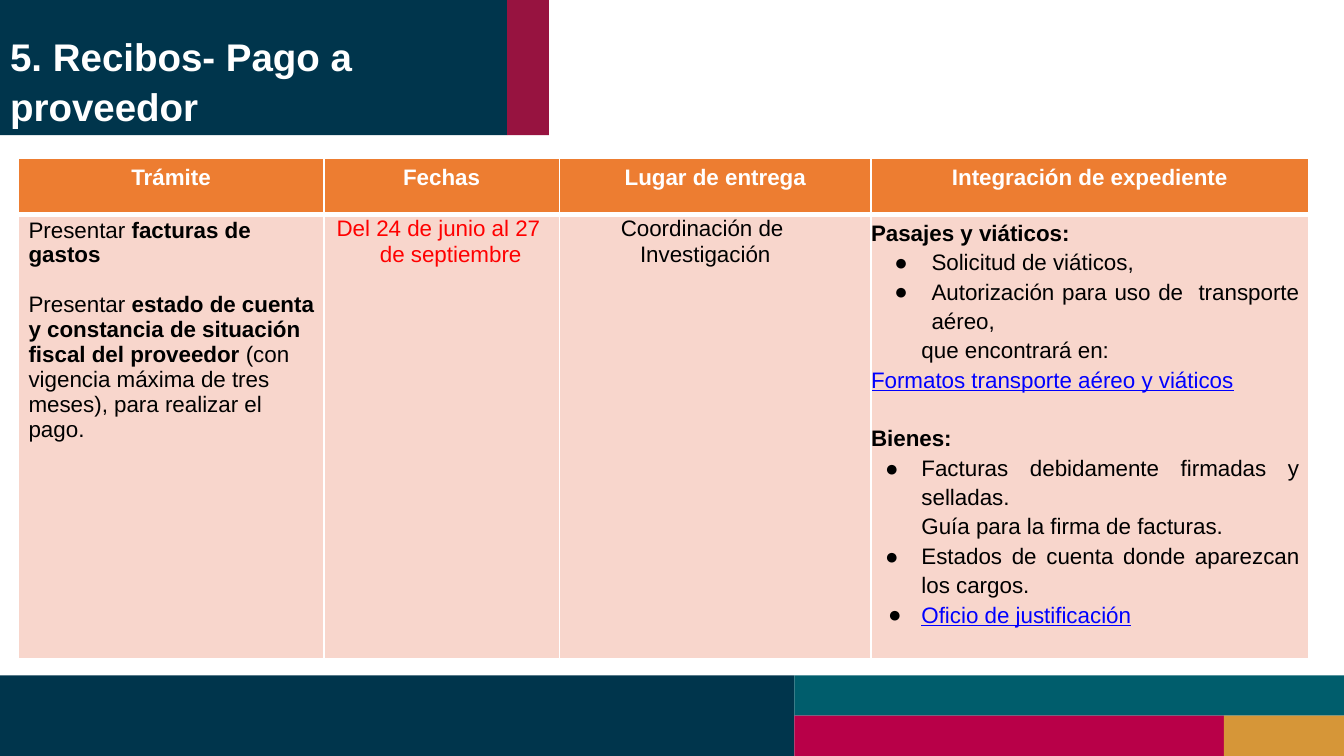
from dataclasses import dataclass
from lxml.etree import SubElement
from pptx import Presentation
from pptx.dml.color import RGBColor
from pptx.enum.shapes import MSO_SHAPE
from pptx.enum.text import MSO_ANCHOR, PP_ALIGN
from pptx.oxml.ns import qn
from pptx.util import Pt


@dataclass(frozen=True)
class Theme:
    navy: str = "00354C"
    wine: str = "971340"
    teal: str = "005D6C"
    rose: str = "B80048"
    gold: str = "D69638"
    orange: str = "ED7D31"
    blush: str = "F8D6CC"
    white: str = "FFFFFF"
    black: str = "000000"
    red: str = "FF0000"
    link: str = "0000FF"
    face: str = "Arial"
    title: float = 27.5
    body: float = 16


THEME = Theme()
HEADS = ["Trámite", "Fechas", "Lugar de entrega", "Integración de expediente"]
WIDTHS = [218, 168.5, 222.5, 312.5]
LINK = {"color": THEME.link, "underline": True}
BOLD = {"bold": True}
LEFT = {"left": 7.2}
JUST = {"align": PP_ALIGN.JUSTIFY, "line": 1.18}
ITEM = JUST | {"left": 43.2, "hang": -26.6, "mark": True}
GOODS = JUST | {"left": 36, "hang": -25.9, "mark": True}
NOTE = JUST | {"left": 36}
MID = {"align": PP_ALIGN.CENTER, "line": 1.04}

BODY = [
    ({"margin_top": 2.2}, [
        (LEFT, [("Presentar ", {}), ("facturas de gastos", BOLD)]),
        (LEFT | {"before": 17.8}, [
            ("Presentar ", {}),
            ("estado de cuenta y constancia de situación fiscal del proveedor", BOLD),
            (" (con vigencia máxima de tres meses), para realizar el pago.", {}),
        ]),
    ]),
    ({"margin_top": 0.7, "margin_right": 8}, [
        (MID | {"left": 20.9, "hang": -13},
         [("Del 24 de junio al 27  de septiembre", {"color": THEME.red})]),
    ]),
    ({"margin_top": 0.7, "margin_right": 14.4}, [
        (MID, [("Coordinación de  Investigación", {})]),
    ]),
    ({"margin_top": 1.4, "margin_right": 6.5}, [
        (JUST, [("Pasajes y viáticos:", BOLD)]),
        (ITEM, [("Solicitud de viáticos,", {})]),
        (ITEM, [("Autorización para uso de  transporte aéreo,", {})]),
        (NOTE, [("que encontrará en:", {})]),
        (JUST, [("Formatos transporte aéreo y viáticos", LINK)]),
        (JUST | {"before": 21}, [("Bienes:", BOLD)]),
        (GOODS, [("Facturas debidamente firmadas y selladas.", {})]),
        (NOTE, [("Guía para la firma de facturas.", {})]),
        (GOODS, [("Estados de cuenta donde aparezcan los cargos.", {})]),
        (GOODS | {"align": PP_ALIGN.LEFT, "line": 1.19, "hang": -23.8},
         [("Oficio de justificación", LINK)]),
    ]),
]


def apply(target, values):
    for name, value in values.items():
        setattr(target, name, value)


def add_block(slide, box, color):
    block = slide.shapes.add_shape(MSO_SHAPE.RECTANGLE, *map(Pt, box))
    block.shadow.inherit = False
    block.fill.solid()
    block.fill.fore_color.rgb = RGBColor.from_string(color)
    block.line.fill.background()


def add_mark(props):
    color = SubElement(props, qn("a:buClr"))
    SubElement(color, qn("a:srgbClr"), val=THEME.black)
    SubElement(props, qn("a:buFont"), typeface=THEME.face)
    SubElement(props, qn("a:buChar"), char="●")


def fill_para(para, look, runs, base):
    props = para._p.get_or_add_pPr()
    props.set("marL", str(Pt(look.get("left", 0))))
    props.set("indent", str(Pt(look.get("hang", 0))))
    if look.get("mark"):
        add_mark(props)
    apply(para, {
        "alignment": look.get("align", PP_ALIGN.LEFT),
        "line_spacing": look.get("line", 1.0),
        "space_before": Pt(look.get("before", 0)),
    })
    for text, extra in runs:
        style = base | extra
        run = para.add_run()
        run.text = text
        run.font.color.rgb = RGBColor.from_string(style.pop("color"))
        apply(run.font, style)


def fill_text(frame, paras, base):
    for index, (look, runs) in enumerate(paras):
        para = frame.add_paragraph() if index else frame.paragraphs[0]
        fill_para(para, look, runs, base)


def set_edges(cell, edges):
    props = cell._tc.get_or_add_tcPr()
    for index, (side, width) in enumerate(edges.items()):
        line = SubElement(props, qn(f"a:ln{side}"), w=str(Pt(width)))
        fill = SubElement(line, qn("a:solidFill"))
        SubElement(fill, qn("a:srgbClr"), val=THEME.white)
        props.insert(index, line)


def fill_cell(cell, color, edges, insets, paras, base):
    zero = dict.fromkeys(
        ["margin_left", "margin_top", "margin_right", "margin_bottom"], 0)
    apply(cell, {key: Pt(size) for key, size in (zero | insets).items()})
    cell.vertical_anchor = MSO_ANCHOR.TOP
    cell.fill.solid()
    cell.fill.fore_color.rgb = RGBColor.from_string(color)
    set_edges(cell, edges)
    fill_text(cell.text_frame, paras, base)


def add_header(slide, box):
    x, y, width, height = box
    split = width - 30
    add_block(slide, (x, y, split, height), THEME.navy)
    add_block(slide, (x + split, y, 30, height), THEME.wine)
    title = slide.shapes.add_textbox(
        Pt(x + 6.5), Pt(y + 20.9), Pt(split + 3.6), Pt(67.7))
    frame = title.text_frame
    apply(frame, {
        "word_wrap": True, "vertical_anchor": MSO_ANCHOR.TOP,
        "margin_left": 0, "margin_top": Pt(0.7),
        "margin_right": 0, "margin_bottom": 0,
    })
    base = {"name": THEME.face, "size": Pt(THEME.title), "bold": True,
            "color": THEME.white}
    fill_text(frame, [({"left": 0.7, "line": 1.07},
                       [("5. Recibos- Pago a proveedor", {})])], base)


def add_footer(slide, box):
    x, y, width, height = box
    half, split, tail = height / 2, 567.5, 874.3
    add_block(slide, (x, y, split, height), THEME.navy)
    add_block(slide, (x + split, y, width - split, half), THEME.teal)
    add_block(slide, (x + split, y + half, tail - split, half), THEME.rose)
    add_block(slide, (x + tail, y + half, width - tail, half), THEME.gold)


def add_grid(slide, box):
    head = 40.3
    grid = slide.shapes.add_table(2, len(HEADS), *map(Pt, box)).table
    for column, width in zip(grid.columns, WIDTHS):
        column.width = Pt(width)
    for row, height in zip(grid.rows, [head, box[3] - head]):
        row.height = Pt(height)
    base = {"name": THEME.face, "size": Pt(THEME.body), "color": THEME.black,
            "bold": False}
    bright = base | {"color": THEME.white, "bold": True}
    thin, thick = 1.5, 4.25
    upper = {"L": thin, "R": thin, "T": thin, "B": thick}
    lower = {"L": thin, "R": thin, "T": thick}
    look = {"align": PP_ALIGN.CENTER, "line": 1.27}
    for index, (label, (insets, paras)) in enumerate(zip(HEADS, BODY)):
        fill_cell(grid.cell(0, index), THEME.orange, upper, {},
                  [(look, [(label, {})])], bright)
        fill_cell(grid.cell(1, index), THEME.blush, lower, insets, paras, base)


def main():
    deck = Presentation()
    apply(deck, {"slide_width": Pt(960), "slide_height": Pt(540)})
    slide = deck.slides.add_slide(deck.slide_layouts[6])
    add_header(slide, (0, 0, 392.2, 96.5))
    add_footer(slide, (0, 482.4, 960, 57.6))
    add_grid(slide, (13.2, 113.2, sum(WIDTHS), 357.5))
    deck.save("out.pptx")


if __name__ == "__main__":
    main()
